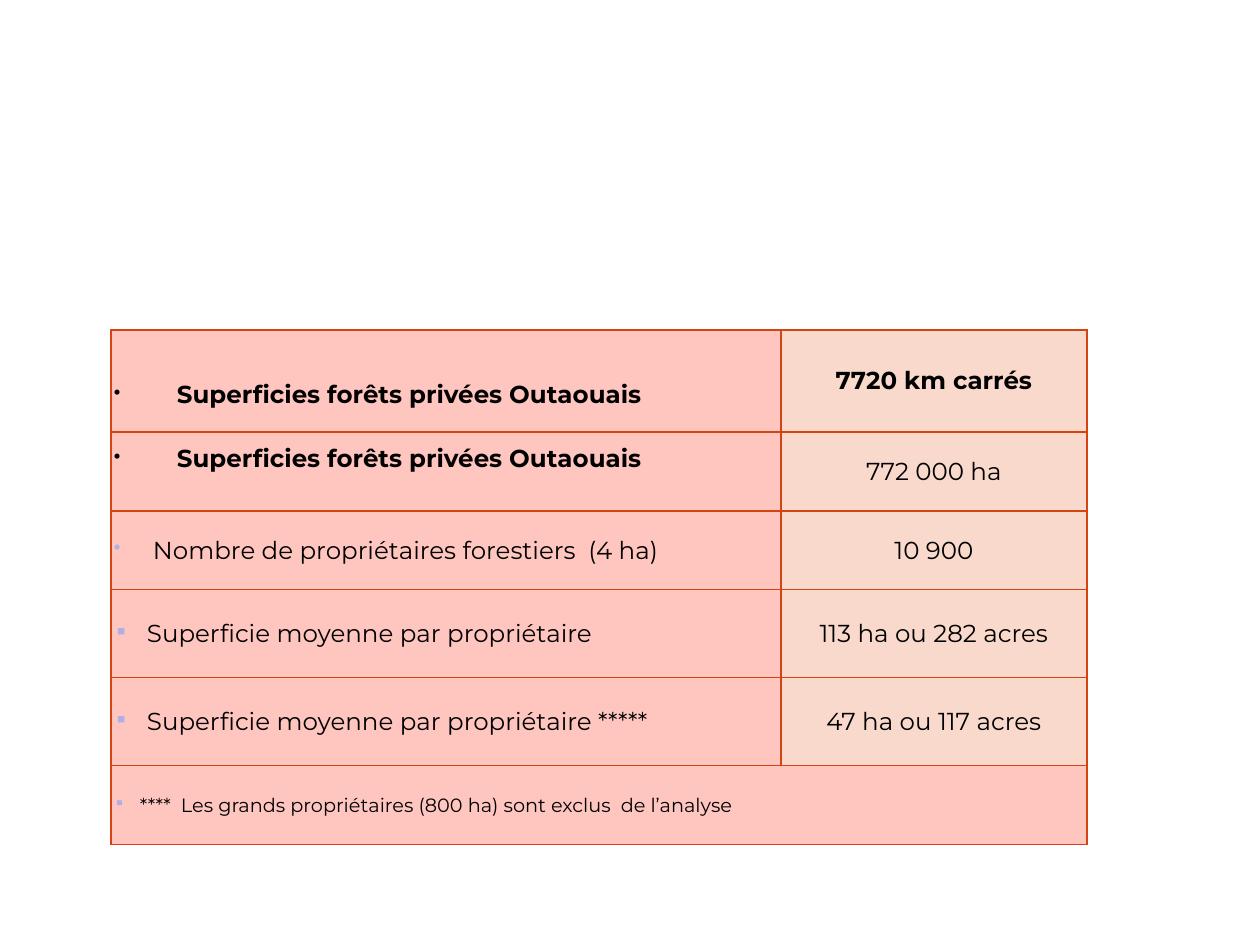
from lxml import etree
from pptx import Presentation
from pptx import util as u
from pptx.dml.color import RGBColor
from pptx.enum import text
from pptx.oxml.ns import qn

PX = 914400 // 126
PINK, PEACH, RUST, LILAC = "FFC5BF", "FAD9CD", "D34412", "AFAFE5"


def paint(fill, tone):
    fill.solid()
    fill.fore_color.rgb = RGBColor.from_string(tone)


def add(node, tag, **attrs):
    return etree.SubElement(node, qn(tag), attrs)


deck = Presentation()
deck.slide_width, deck.slide_height = 1260 * PX, 945 * PX
slide = deck.slides.add_slide(deck.slide_layouts[6])

# Label, value, bullet, bullet colour, indent, top margin (None = centred), bold label, bold value, size
rows = [
    ("Superficies forêts privées Outaouais", "7720 km carrés", "•", "000000", 63, 50, True, True, 14),
    ("Superficies forêts privées Outaouais", "772 000 ha", "•", "000000", 63, 12, True, False, 14),
    ("Nombre de propriétaires forestiers  (4 ha)", "10 900", "•", LILAC, 39, None, False, False, 14),
    ("Superficie moyenne par propriétaire", "113 ha ou 282 acres", "▪", LILAC, 33, None, False, False, 14),
    ("Superficie moyenne par propriétaire *****", "47 ha ou 117 acres", "▪", LILAC, 33, None, False, False, 14),
    ("****  Les grands propriétaires (800 ha) sont exclus  de l’analyse", "", "▪", LILAC, 26, None, False, False, 11),
]
widths = [670, 306]
heights = [102, 79, 79, 88, 88, 79]

# Table grid
frame = slide.shapes.add_table(len(rows), 2, 111 * PX, 330 * PX,
                               sum(widths) * PX, sum(heights) * PX)
table = frame.table
table.first_row = table.horz_banding = False
for col, width in zip(table.columns, widths):
    col.width = width * PX
for row, height in zip(table.rows, heights):
    row.height = height * PX
table.cell(5, 0).merge(table.cell(5, 1))

for r, (label, value, mark, tone, indent, top, strong, heavy, size) in enumerate(rows):
    for c, (words, bold) in enumerate([(label, strong), (value, heavy)]):
        cell = table.cell(r, c)
        cell.margin_left = cell.margin_right = 3 * PX
        cell.margin_top = cell.margin_bottom = 3 * PX
        cell.vertical_anchor = text.MSO_ANCHOR.MIDDLE

        # Borders come before the fill
        props = cell._tc.get_or_add_tcPr()
        for side in ("a:lnL", "a:lnR", "a:lnT", "a:lnB"):
            line = add(props, side, w=str(u.Pt(0.75)))
            add(add(line, "a:solidFill"), "a:srgbClr", val=RUST)
        paint(cell.fill, PEACH if c and not cell.is_spanned else PINK)
        if cell.is_spanned:
            continue

        para = cell.text_frame.paragraphs[0]
        para.add_run().text = words
        if c:
            para.alignment = text.PP_ALIGN.CENTER
        else:
            # Bulleted label with a hanging indent
            if top is not None:
                cell.vertical_anchor = text.MSO_ANCHOR.TOP
                cell.margin_top = top * PX
            ppr = para._p.get_or_add_pPr()
            ppr.set("marL", str(indent * PX))
            ppr.set("indent", str(-indent * PX))
            add(add(ppr, "a:buClr"), "a:srgbClr", val=tone)
            add(ppr, "a:buSzPct", val="80000")
            add(ppr, "a:buChar", char=mark)
        font = para.font
        font.name, font.size, font.bold = "Montserrat", u.Pt(size), bold
        paint(font.fill, "000000")

deck.save("out.pptx")
